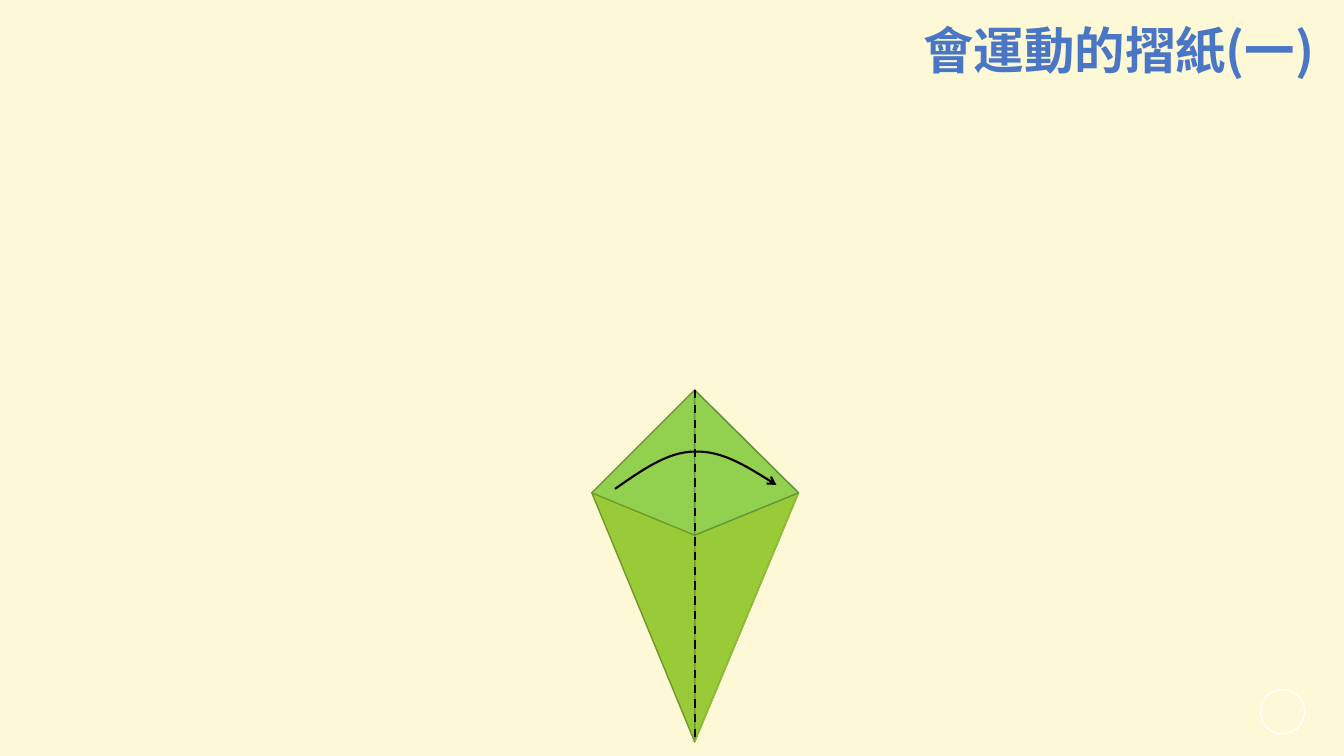
from dataclasses import dataclass

import pptx
import pptx.dml.color
import pptx.enum.dml
import pptx.enum.shapes
import pptx.enum.text
import pptx.oxml.ns
import pptx.oxml.xmlchemy
import pptx.util
from pptx.util import Inches

Point = tuple[float, float]


@dataclass(frozen=True)
class Theme:
    background: str = "FDF9D7"
    title: str = "4A76C6"
    ring: str = "FFFFFF"
    body: str = "99CB38"
    body_edge: str = "719629"
    flap: str = "92D050"
    left_flap_edge: str = "739A28"
    right_flap_edge: str = "60943C"
    ink: str = "000000"
    font: str = "Noto Sans CJK SC"
    title_size: int = 36
    thin: float = 0.5
    edge: float = 1
    fold: float = 1.5


@dataclass(frozen=True)
class Panel:
    corners: list[Point]
    fill: str
    edge: str


@dataclass(frozen=True)
class Crease:
    start: Point
    end: Point
    color: str
    width: float
    dashed: bool = False


THEME = Theme()
TOP, BOTTOM, CENTER = (6.89, 3.87), (6.89, 7.36), (6.89, 5.31)
LEFT, RIGHT = (5.87, 4.89), (7.92, 4.89)
PANELS = [
    Panel([BOTTOM, TOP, RIGHT], THEME.body, THEME.body_edge),
    Panel([BOTTOM, TOP, LEFT], THEME.body, THEME.body_edge),
    Panel([TOP, LEFT, CENTER], THEME.flap, THEME.left_flap_edge),
    Panel([TOP, RIGHT, CENTER], THEME.flap, THEME.right_flap_edge),
]
SIDE_CREASE = Crease(RIGHT, BOTTOM, THEME.body, THEME.thin)
FOLD_LINE = Crease(TOP, BOTTOM, THEME.ink, THEME.fold, dashed=True)
ARROW_CURVE = [
    (6.1, 4.85),
    (6.36, 4.67), (6.62, 4.48), (6.89, 4.48),
    (7.15, 4.47), (7.43, 4.64), (7.7, 4.81),
]


def rgb(color: str) -> pptx.dml.color.RGBColor:
    return pptx.dml.color.RGBColor.from_string(color)


def new_element(tag: str):
    return pptx.oxml.xmlchemy.OxmlElement(tag)


def style_line(line, color: str, width: float) -> None:
    line.color.rgb = rgb(color)
    line.width = pptx.util.Pt(width)


def draw_outline(shapes, points: list[Point], close: bool):
    corners = [(Inches(x), Inches(y)) for x, y in points]
    builder = shapes.build_freeform(*corners[0], scale=1.0)
    builder.add_line_segments(corners[1:], close=close)
    shape = builder.convert_to_shape()
    shape.shadow.inherit = False
    return shape


def draw_panel(shapes, panel: Panel) -> None:
    shape = draw_outline(shapes, panel.corners, close=True)
    shape.fill.solid()
    shape.fill.fore_color.rgb = rgb(panel.fill)
    style_line(shape.line, panel.edge, THEME.edge)


def draw_crease(shapes, crease: Crease) -> None:
    ends = [Inches(value) for value in crease.start + crease.end]
    connector = shapes.add_connector(pptx.enum.shapes.MSO_CONNECTOR.STRAIGHT, *ends)
    style_line(connector.line, crease.color, crease.width)
    if crease.dashed:
        connector.line.dash_style = pptx.enum.dml.MSO_LINE.DASH
    connector._element.spPr.append(new_element("a:effectLst"))


def draw_curved_arrow(shapes, points: list[Point]) -> None:
    shape = draw_outline(shapes, points, close=False)
    shape.fill.background()
    style_line(shape.line, THEME.ink, THEME.fold)
    segments = list(shape._element.iter(pptx.oxml.ns.qn("a:lnTo")))
    for first in range(0, len(segments), 3):
        curve = new_element("a:cubicBezTo")
        segments[first].addprevious(curve)
        for segment in segments[first:first + 3]:
            curve.append(segment[0])
            segment.getparent().remove(segment)
    arrowhead = new_element("a:tailEnd")
    arrowhead.set("type", "arrow")
    shape.line._get_or_add_ln().append(arrowhead)


def draw_ring(shapes) -> None:
    ring = shapes.add_shape(
        pptx.enum.shapes.MSO_SHAPE.OVAL,
        Inches(12.5), Inches(6.84), Inches(0.44), Inches(0.44),
    )
    ring.shadow.inherit = False
    ring.fill.background()
    style_line(ring.line, THEME.ring, THEME.edge)


def draw_kite(shapes) -> None:
    kite = shapes.add_group_shape().shapes
    for panel in PANELS[:2]:
        draw_panel(kite, panel)
    draw_crease(kite, SIDE_CREASE)
    for panel in PANELS[2:]:
        draw_panel(kite, panel)
    draw_crease(kite, FOLD_LINE)
    draw_curved_arrow(kite, ARROW_CURVE)


def draw_title(shapes, text: str) -> None:
    box = shapes.add_textbox(Inches(9.06), Inches(0.21), Inches(4.09), Inches(0.71))
    frame = box.text_frame
    frame.word_wrap = True
    frame.auto_size = pptx.enum.text.MSO_AUTO_SIZE.SHAPE_TO_FIT_TEXT
    paragraph = frame.paragraphs[0]
    paragraph.text = text
    paragraph.line_spacing = 0.9
    font = paragraph.font
    font.name = THEME.font
    font.size = pptx.util.Pt(THEME.title_size)
    font.bold = True
    font.color.rgb = rgb(THEME.title)
    east_asian = new_element("a:ea")
    east_asian.set("typeface", THEME.font)
    font._element.find(pptx.oxml.ns.qn("a:latin")).addnext(east_asian)


def main() -> None:
    presentation = pptx.Presentation()
    presentation.slide_width = Inches(13.33)
    presentation.slide_height = Inches(7.5)
    slide = presentation.slides.add_slide(presentation.slide_layouts[6])
    slide.background.fill.solid()
    slide.background.fill.fore_color.rgb = rgb(THEME.background)
    draw_ring(slide.shapes)
    draw_kite(slide.shapes)
    draw_title(slide.shapes, "會運動的摺紙(一)")
    presentation.save("out.pptx")


if __name__ == "__main__":
    main()
